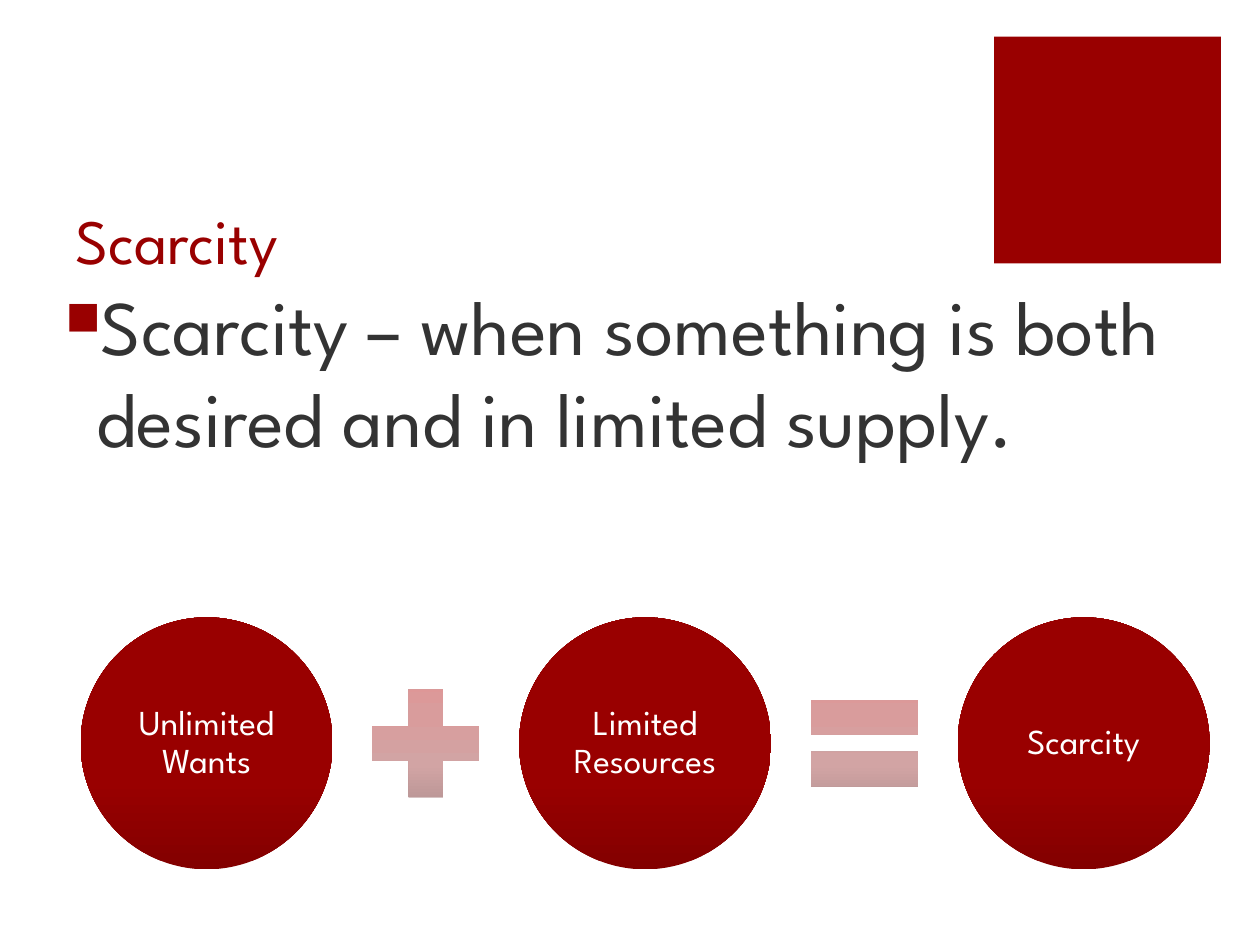
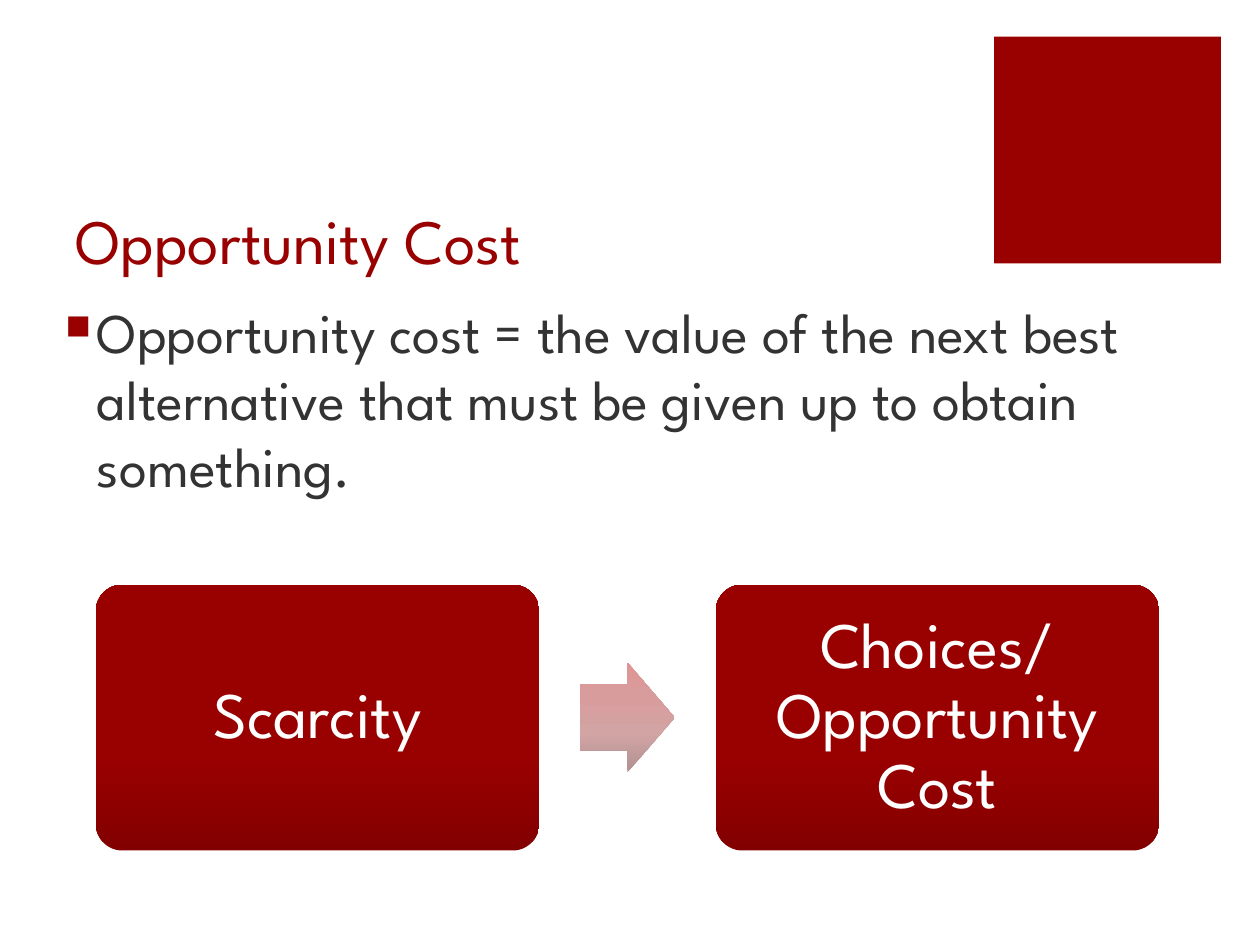
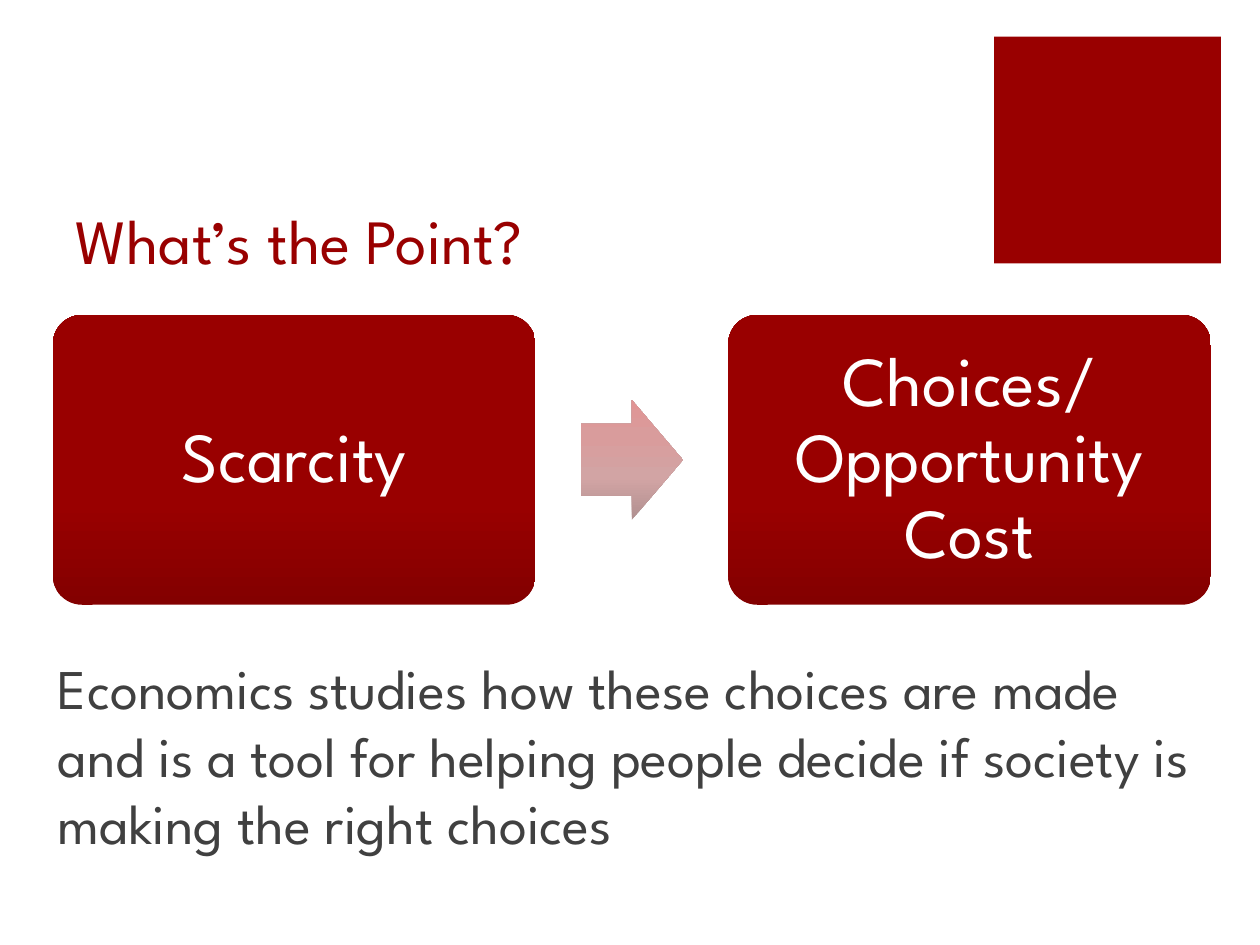
from copy import deepcopy
from dataclasses import dataclass

from lxml.etree import SubElement
from pptx import Presentation
from pptx.dml.color import RGBColor
from pptx.enum.shapes import MSO_SHAPE
from pptx.enum.text import MSO_ANCHOR, PP_ALIGN
from pptx.oxml.ns import qn
from pptx.shapes.autoshape import Shape
from pptx.slide import Slide
from pptx.text.text import TextFrame
from pptx.util import Inches, Pt

FONT = "League Spartan"
RED = "990000"
WHITE = "FFFFFF"
BODY_GREY = "333333"
SUMMARY_GREY = "404040"
NODE_STOPS = ((0, "830000"), (0.35, RED), (0.7, RED), (1, RED))
LINK_STOPS = ((0, "B09090"), (0.35, "D2A4A4"), (0.7, "D99C9C"), (1, "E19494"))


@dataclass(frozen=True)
class Box:
    """A rectangle on the slide, in inches."""

    left: float
    top: float
    width: float
    height: float

    def emu(self) -> tuple[int, int, int, int]:
        """Return the rectangle as lengths."""
        return (Inches(self.left), Inches(self.top),
                Inches(self.width), Inches(self.height))


@dataclass(frozen=True)
class Flow:
    """A row of labelled nodes with a link in each gap."""

    labels: tuple[str, ...]
    links: tuple[MSO_SHAPE, ...]
    first: Box
    step: float
    link_width: float
    link_height: float
    size: int
    inset: float
    node: MSO_SHAPE = MSO_SHAPE.ROUNDED_RECTANGLE
    node_adjustments: tuple[float, ...] = (0.1,)
    link_adjustments: tuple[float, ...] = (0.6, 0.5)


TITLE = Box(0.5, 1, 7.12, 1.25)
CORNER = Box(7.89, 0.29, 1.8, 1.8)
CHOICE_LABELS = ("Scarcity", "Choices/Opportunity Cost")


def color(value: str) -> RGBColor:
    """Turn a hex string into a colour."""
    return RGBColor.from_string(value)


def style_text(frame: TextFrame, text: str, size: int, ink: str) -> None:
    """Fill a frame with one wrapped paragraph."""
    frame.word_wrap = True
    frame.text = text
    font = frame.paragraphs[0].runs[0].font
    font.name, font.size, font.color.rgb = FONT, Pt(size), color(ink)


def add_shape(slide: Slide, kind: MSO_SHAPE, box: Box) -> Shape:
    """Add a preset shape without line or shadow."""
    shape = slide.shapes.add_shape(kind, *box.emu())
    shape.shadow.inherit = False
    shape.line.fill.background()
    return shape


def add_gradient_shape(slide: Slide, kind: MSO_SHAPE, box: Box,
                       stops: tuple[tuple[float, str], ...],
                       adjustments: tuple[float, ...]) -> Shape:
    """Add a shape shaded from bottom to top."""
    shape = add_shape(slide, kind, box)
    for index, value in enumerate(adjustments):
        shape.adjustments[index] = value
    shape.fill.gradient()
    shape.fill.gradient_angle = 90
    stop_list = next(shape._element.iter(qn("a:gsLst")))
    while len(stop_list) < len(stops):
        stop_list.append(deepcopy(stop_list[0]))
    for stop, (position, shade) in zip(shape.fill.gradient_stops, stops):
        stop.position = position
        stop.color.rgb = color(shade)
    return shape


def add_text(slide: Slide, box: Box, text: str, size: int, ink: str) -> TextFrame:
    """Add a text box."""
    frame = slide.shapes.add_textbox(*box.emu()).text_frame
    style_text(frame, text, size, ink)
    return frame


def add_definition(slide: Slide, box: Box, text: str, size: int) -> None:
    """Add a definition with a red square bullet."""
    paragraph = add_text(slide, box, text, size, BODY_GREY).paragraphs[0]
    paragraph.space_before = Pt(18)
    properties = paragraph._p.get_or_add_pPr()
    properties.set("marL", str(Inches(0.25)))
    properties.set("indent", str(Inches(-0.25)))
    SubElement(SubElement(properties, qn("a:buClr")), qn("a:srgbClr"), val=RED)
    SubElement(properties, qn("a:buSzPct"), val="62000")
    SubElement(properties, qn("a:buChar"), char="■")


def add_flow(slide: Slide, flow: Flow) -> None:
    """Draw the nodes, then the links centred between them."""
    first = flow.first
    for index, label in enumerate(flow.labels):
        box = Box(first.left + index * flow.step, first.top, first.width, first.height)
        node = add_gradient_shape(slide, flow.node, box, NODE_STOPS, flow.node_adjustments)
        frame = node.text_frame
        style_text(frame, label, flow.size, WHITE)
        frame.vertical_anchor = MSO_ANCHOR.MIDDLE
        frame.margin_left = frame.margin_right = Inches(flow.inset)
        frame.margin_top = frame.margin_bottom = Inches(flow.inset)
        frame.paragraphs[0].alignment = PP_ALIGN.CENTER
        frame.paragraphs[0].line_spacing = 0.9
    link_left = first.left + (first.width + flow.step - flow.link_width) / 2
    link_top = first.top + (first.height - flow.link_height) / 2
    for index, kind in enumerate(flow.links):
        box = Box(link_left + index * flow.step, link_top, flow.link_width, flow.link_height)
        add_gradient_shape(slide, kind, box, LINK_STOPS, flow.link_adjustments)


def add_titled_slide(deck: Presentation, title: str) -> Slide:
    """Add a slide with the corner square and a title."""
    slide = deck.slides.add_slide(deck.slide_layouts[6])
    corner = add_shape(slide, MSO_SHAPE.RECTANGLE, CORNER)
    corner.fill.solid()
    corner.fill.fore_color.rgb = color(RED)
    add_text(slide, TITLE, title, 36, RED).vertical_anchor = MSO_ANCHOR.BOTTOM
    return slide


def main() -> None:
    """Build the deck."""
    deck = Presentation()
    deck.slide_width, deck.slide_height = Inches(10), Inches(7.5)

    scarcity = add_titled_slide(deck, "Scarcity")
    add_definition(scarcity, Box(0.42, 2.16, 9.17, 3.71),
                   "Scarcity – when something is both desired and in limited supply.", 44)
    add_flow(scarcity, Flow(
        ("Unlimited Wants", "Limited Resources", "Scarcity"),
        (MSO_SHAPE.MATH_PLUS, MSO_SHAPE.MATH_EQUAL),
        Box(0.64, 4.9, 2, 2), 3.48, 1.16, 1.16, 20, 0.03,
        MSO_SHAPE.OVAL, (), ()))

    opportunity = add_titled_slide(deck, "Opportunity Cost")
    add_definition(opportunity, Box(0.42, 2.31, 9.19, 2.23),
                   "Opportunity cost = the value of the next best alternative "
                   "that must be given up to obtain something.", 32)
    add_flow(opportunity, Flow(
        CHOICE_LABELS, (MSO_SHAPE.RIGHT_ARROW,),
        Box(0.76, 4.64, 3.52, 2.11), 4.92, 0.75, 0.87, 37, 0.15))

    point = add_titled_slide(deck, "What’s the Point?")
    add_flow(point, Flow(
        CHOICE_LABELS, (MSO_SHAPE.RIGHT_ARROW,),
        Box(0.42, 2.5, 3.83, 2.3), 5.36, 0.81, 0.95, 40, 0.17))
    add_text(point, Box(0.36, 5.14, 9.26, 1.72),
             "Economics studies how these choices are made and is a tool for "
             "helping people decide if society is making the right choices",
             32, SUMMARY_GREY)

    deck.save("out.pptx")


if __name__ == "__main__":
    main()
